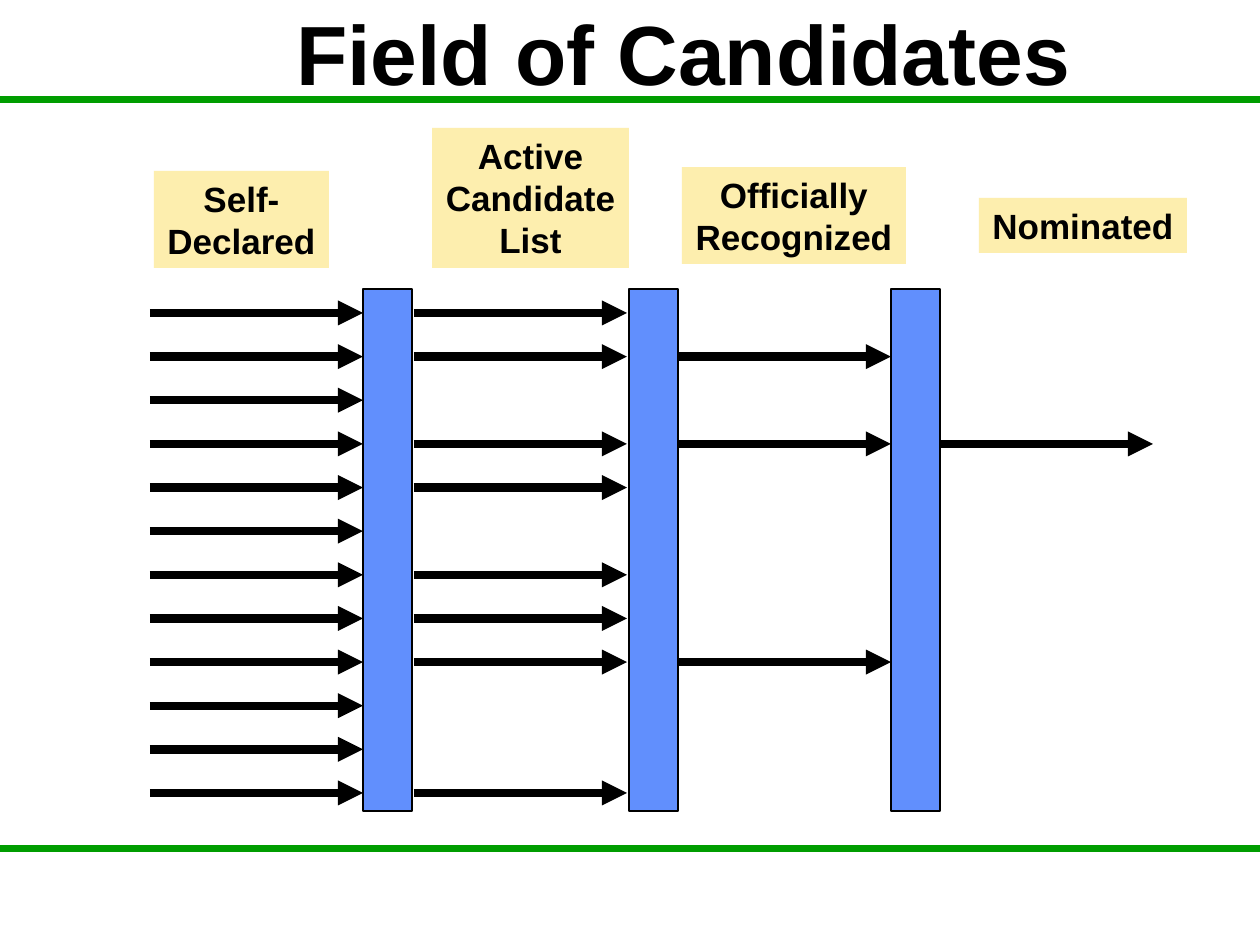
from pptx import Presentation
from pptx.dml.color import RGBColor
from pptx.enum.shapes import MSO_CONNECTOR as CONNECTOR, MSO_SHAPE as SHAPE
from pptx.enum.text import MSO_ANCHOR as ANCHOR, MSO_AUTO_SIZE as AUTO_SIZE, PP_ALIGN as ALIGN
from pptx.oxml.ns import qn
from pptx.util import Pt
from lxml import etree

SCALE = 914400 / 126  # EMU per px
BLACK = RGBColor(0x00, 0x00, 0x00)
GREEN = RGBColor(0x00, 0x9D, 0x00)
CREAM = RGBColor(0xFD, 0xEE, 0xAE)
BLUE = RGBColor(0x61, 0x8F, 0xFD)


def emu(*lengths):
    return [round(length * SCALE) for length in lengths]


def add_line(left, right, y, color, width, arrow=False):
    line = page.shapes.add_connector(CONNECTOR.STRAIGHT, *emu(left, y, right, y))
    line.line.color.rgb = color
    line.line.width = Pt(width)
    if arrow:
        etree.SubElement(line.line._get_or_add_ln(), qn("a:tailEnd"), type="triangle")
    etree.SubElement(line._element.spPr, qn("a:effectLst"))


deck = Presentation()
deck.slide_width, deck.slide_height = emu(1260, 945)
page = deck.slides.add_slide(deck.slide_layouts[5])

# Green rules above and below the content
for y in (100, 849):
    add_line(-44, 1300, y, GREEN, 4)

# Title
title = page.shapes.title
title.left, title.top, title.width, title.height = emu(185, 6, 997, 122)
frame = title.text_frame
frame.text = "Field of Candidates"
frame.auto_size = AUTO_SIZE.NONE
frame.vertical_anchor = ANCHOR.MIDDLE
para = frame.paragraphs[0]
para.alignment = ALIGN.CENTER
para.line_spacing = Pt(40)
font = para.runs[0].font
font.name, font.size, font.bold = "Arial", Pt(48), True
font.color.rgb = BLACK

# Stage labels
labels = [
    ("Self-\nDeclared", 154, 171, 175, 97),
    ("Active\nCandidate\nList", 432, 128, 197, 140),
    ("Officially\nRecognized", 682, 167, 224, 97),
    ("Nominated", 979, 198, 208, 55),
]
for text, *place in labels:
    box = page.shapes.add_shape(SHAPE.RECTANGLE, *emu(*place))
    box.shadow.inherit = False
    box.fill.solid()
    box.fill.fore_color.rgb = CREAM
    box.line.fill.background()
    frame = box.text_frame
    frame.text = text
    frame.word_wrap = False
    frame.auto_size = AUTO_SIZE.SHAPE_TO_FIT_TEXT
    for para in frame.paragraphs:
        para.alignment = ALIGN.CENTER
        font = para.runs[0].font
        font.name, font.size, font.bold = "Arial", Pt(20), True
        font.color.rgb = BLACK

# Candidates that reach each stage: arrow start, arrow end, rows
FIRST_ROW, LAST_ROW, ROWS = 313, 793, 12
ROW_STEP = (LAST_ROW - FIRST_ROW) / (ROWS - 1)
stages = [
    (150, 363, range(ROWS)),
    (414, 627, (0, 1, 3, 4, 6, 7, 8, 11)),
    (678, 891, (1, 3, 8)),
    (940, 1153, (3,)),
]
for start, end, rows in stages:
    for row in rows:
        add_line(start, end, FIRST_ROW + row * ROW_STEP, BLACK, 4.75, arrow=True)

# Screening bars between the stages
for left in (363, 629, 891):
    bar = page.shapes.add_shape(SHAPE.RECTANGLE, *emu(left, 289, 49, 522))
    bar.shadow.inherit = False
    bar.fill.solid()
    bar.fill.fore_color.rgb = BLUE
    bar.line.color.rgb = BLACK
    bar.line.width = Pt(1)

deck.save("out.pptx")
